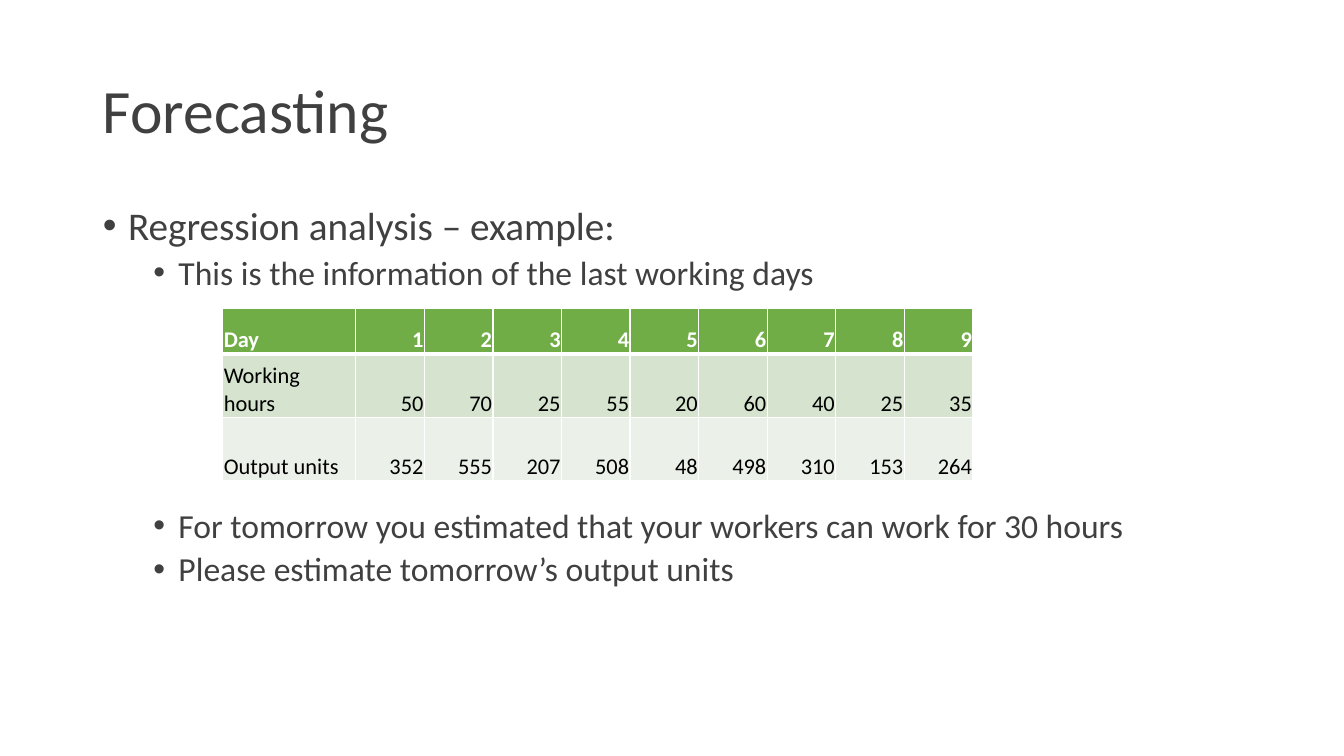
from lxml.etree import SubElement
from pptx import Presentation
from pptx.dml.color import RGBColor
from pptx.enum.text import MSO_ANCHOR, MSO_AUTO_SIZE, PP_ALIGN
from pptx.oxml.ns import qn
from pptx.util import Inches, Pt

# Content
TITLE = "Forecasting"
BULLETS = [  # level, text, size, space before
    (0, "Regression analysis – example:", 28, 0),
    (1, "This is the information of the last working days", 24, 5),
    (1, "For tomorrow you estimated that your workers can work for 30 hours", 24, 155),
    (1, "Please estimate tomorrow’s output units", 24, 5),
]
ROWS = [
    ("Day", 1, 2, 3, 4, 5, 6, 7, 8, 9),
    ("Working hours", 50, 70, 25, 55, 20, 60, 40, 25, 35),
    ("Output units", 352, 555, 207, 508, 48, 498, 310, 153, 264),
]

# Formats: row fill, text colour, bold, top line, bottom line
ROW_LOOKS = [
    ("70AD47", "FFFFFF", True, 1, 3),
    ("D5E3CF", "000000", False, 3, 1),
    ("EBF1E9", "000000", False, 1, 1),
]
TEXT = "404041"
LINE = "FFFFFF"

# Grid in inches
LEFT, WIDTH = 0.92, 11.5
TITLE_TOP, TITLE_HEIGHT = 0.4, 1.45
BODY_TOP, BODY_HEIGHT = 2, 4.76
TABLE_LEFT, TABLE_TOP = 2.21, 3.06
COLUMNS = [1.32] + [0.68] * 9
HEIGHTS = [0.45, 0.63, 0.63]


def colour(value):
    return RGBColor.from_string(value)


def apply(target, values):
    for name, value in values.items():
        setattr(target, name, value)


def place(shape, *box):
    names = ("left", "top", "width", "height")
    apply(shape, dict(zip(names, map(Inches, box))))


def write(para, text, size, tint, bold=False):
    span = para.add_run()
    span.text = text
    apply(span.font, {"name": "Calibri", "size": Pt(size), "bold": bold})
    span.font.color.rgb = colour(tint)


def add_bullet(para, level):
    props = para._p.get_or_add_pPr()
    props.set("marL", str(Inches(0.25 + 0.5 * level)))
    props.set("indent", str(Inches(-0.25)))
    SubElement(props, qn("a:buFont"), typeface="Arial")
    SubElement(props, qn("a:buChar"), char="•")


def add_border(cell, side, points):
    props = cell._tc.get_or_add_tcPr()
    line = SubElement(props, qn(f"a:ln{side}"), w=str(Pt(points)))
    fill = SubElement(line, qn("a:solidFill"))
    SubElement(fill, qn("a:srgbClr"), val=LINE)


def fill_title(box):
    place(box, LEFT, TITLE_TOP, WIDTH, TITLE_HEIGHT)
    frame = box.text_frame
    apply(frame, {"vertical_anchor": MSO_ANCHOR.MIDDLE, "auto_size": MSO_AUTO_SIZE.NONE})
    para = frame.paragraphs[0]
    apply(para, {"alignment": PP_ALIGN.LEFT, "line_spacing": 0.9})
    write(para, TITLE, 44, TEXT)


def fill_body(box):
    place(box, LEFT, BODY_TOP, WIDTH, BODY_HEIGHT)
    frame = box.text_frame
    frame.auto_size = MSO_AUTO_SIZE.NONE
    for index, (level, text, size, gap) in enumerate(BULLETS):
        para = frame.add_paragraph() if index else frame.paragraphs[0]
        add_bullet(para, level)
        apply(para, {"level": level, "line_spacing": 0.9, "space_before": Pt(gap)})
        write(para, text, size, TEXT)


def fill_cell(cell, value, look):
    fill, tint, bold, top, bottom = look
    for side, points in (("L", 1), ("R", 1), ("T", top), ("B", bottom)):
        add_border(cell, side, points)
    cell.fill.solid()
    cell.fill.fore_color.rgb = colour(fill)
    inset = Inches(0.01)
    apply(cell, {"vertical_anchor": MSO_ANCHOR.BOTTOM, "margin_left": inset,
                 "margin_right": inset, "margin_top": inset, "margin_bottom": 0})
    para = cell.text_frame.paragraphs[0]
    para.alignment = PP_ALIGN.LEFT if isinstance(value, str) else PP_ALIGN.RIGHT
    write(para, str(value), 16, tint, bold)


def add_day_table(page):
    box = map(Inches, (TABLE_LEFT, TABLE_TOP, sum(COLUMNS), sum(HEIGHTS)))
    table = page.shapes.add_table(len(ROWS), len(COLUMNS), *box).table
    for column, width in zip(table.columns, COLUMNS):
        column.width = Inches(width)
    for row, height, values, look in zip(table.rows, HEIGHTS, ROWS, ROW_LOOKS):
        row.height = Inches(height)
        for cell, value in zip(row.cells, values):
            fill_cell(cell, value, look)


def main():
    deck = Presentation()
    apply(deck, {"slide_width": Inches(13.33), "slide_height": Inches(7.5)})
    page = deck.slides.add_slide(deck.slide_layouts[1])
    fill_title(page.shapes.title)
    fill_body(page.placeholders[1])
    add_day_table(page)
    deck.save("out.pptx")


if __name__ == "__main__":
    main()
